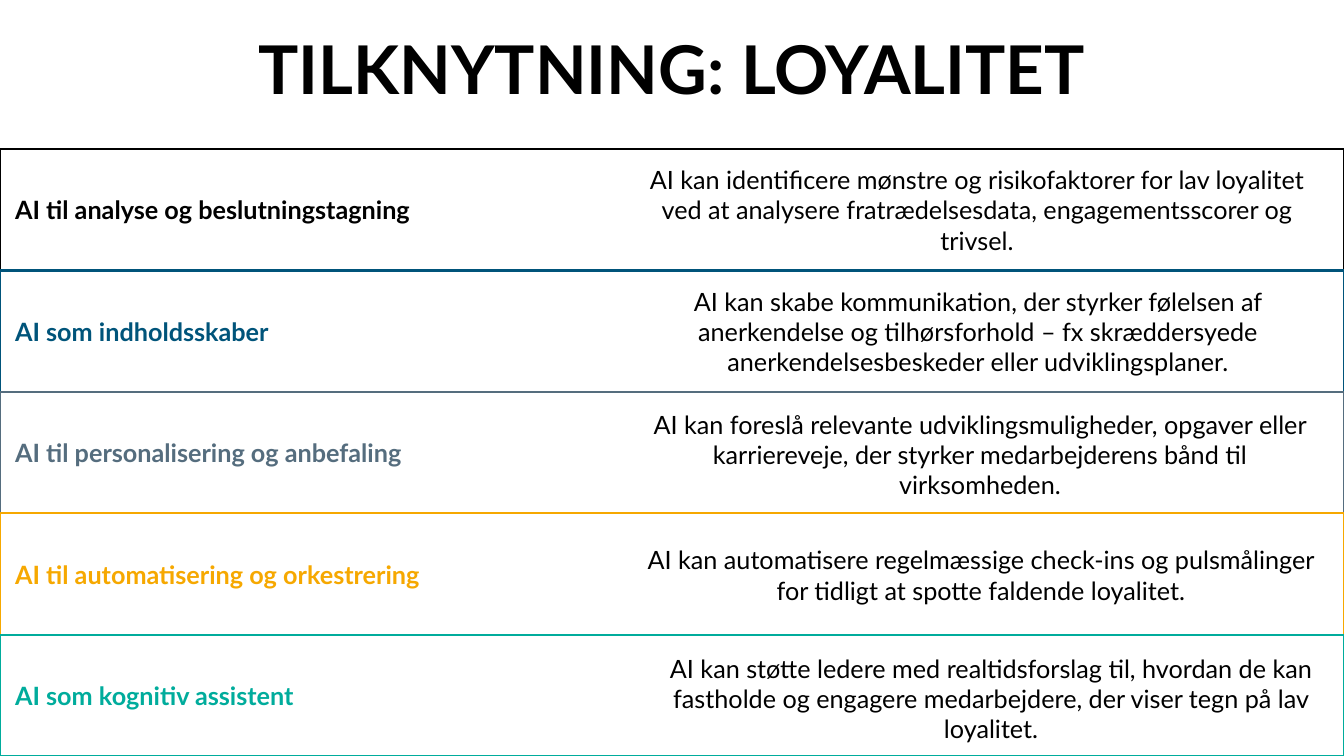
"""Builds a slide on how AI supports employee loyalty in five roles."""
from dataclasses import dataclass

from pptx import Presentation
from pptx.dml.color import RGBColor as Rgb
from pptx.enum.shapes import MSO_SHAPE as Preset
from pptx.enum.text import MSO_ANCHOR as Anchor, PP_ALIGN as Align
from pptx.util import Inches, Pt


@dataclass(frozen=True)
class Theme:
    font: str = "Lato"
    black: str = "000000"
    blue: str = "00547A"
    slate: str = "556D7E"
    amber: str = "F6A800"
    teal: str = "00AC9C"
    title_size: int = 48
    body_size: int = 18
    border: float = 1.5


theme = Theme()


def write(holder, text, size=theme.body_size, color=theme.black, bold=False,
          align=Align.CENTER, indent=0.1):
    frame = holder.text_frame
    frame.word_wrap = True
    frame.vertical_anchor = Anchor.MIDDLE
    frame.margin_left = Inches(indent)
    paragraph = frame.paragraphs[0]
    paragraph.alignment = align
    run = paragraph.add_run()
    run.text = text
    run.font.name = theme.font
    run.font.size = Pt(size)
    run.font.bold = bold
    run.font.color.rgb = Rgb.from_string(color)


roles = [
    ("AI til analyse og beslutningstagning", theme.black, 6.19, 0,
     "AI kan identificere mønstre og risikofaktorer for lav loyalitet ved at "
     "analysere fratrædelsesdata, engagementsscorer og trivsel."),
    ("AI som indholdsskaber", theme.blue, 6.2, 0,
     "AI kan skabe kommunikation, der styrker følelsen af anerkendelse og "
     "tilhørsforhold – fx skræddersyede anerkendelsesbeskeder eller udviklingsplaner."),
    ("AI til personalisering og anbefaling", theme.slate, 6.22, 0.02,
     "AI kan foreslå relevante udviklingsmuligheder, opgaver eller karriereveje, "
     "der styrker medarbejderens bånd til virksomheden."),
    ("AI til automatisering og orkestrering", theme.amber, 6.23, 0.01,
     "AI kan automatisere regelmæssige check-ins og pulsmålinger for tidligt at "
     "spotte faldende loyalitet."),
    ("AI som kognitiv assistent", theme.teal, 6.33, 0.03,
     "AI kan støtte ledere med realtidsforslag til, hvordan de kan fastholde og "
     "engagere medarbejdere, der viser tegn på lav loyalitet."),
]

deck = Presentation()
deck.slide_width, deck.slide_height = Inches(13.33), Inches(7.5)
slide = deck.slides.add_slide(deck.slide_layouts[6])
shapes = slide.shapes

rows_top = Inches(1.48)
row_height = (deck.slide_height - rows_top) // len(roles)
row_tops = [rows_top + index * row_height for index in range(len(roles))]

for top, (role, color, *_) in zip(row_tops, roles):
    band = shapes.add_shape(Preset.RECTANGLE, 0, top, deck.slide_width, row_height)
    band.shadow.inherit = False
    band.fill.background()
    band.line.color.rgb = Rgb.from_string(color)
    band.line.width = Pt(theme.border)
    write(band, role, color=color, bold=True, align=Align.LEFT, indent=0.15)

title = shapes.add_textbox(0, 0, deck.slide_width, Inches(1.34))
write(title, "TILKNYTNING: LOYALITET", size=theme.title_size, bold=True)

for top, (_, _, left, drop, benefit) in zip(row_tops, roles):
    description = shapes.add_textbox(Inches(left), top + Inches(drop), Inches(7), row_height)
    write(description, benefit)

deck.save("out.pptx")
